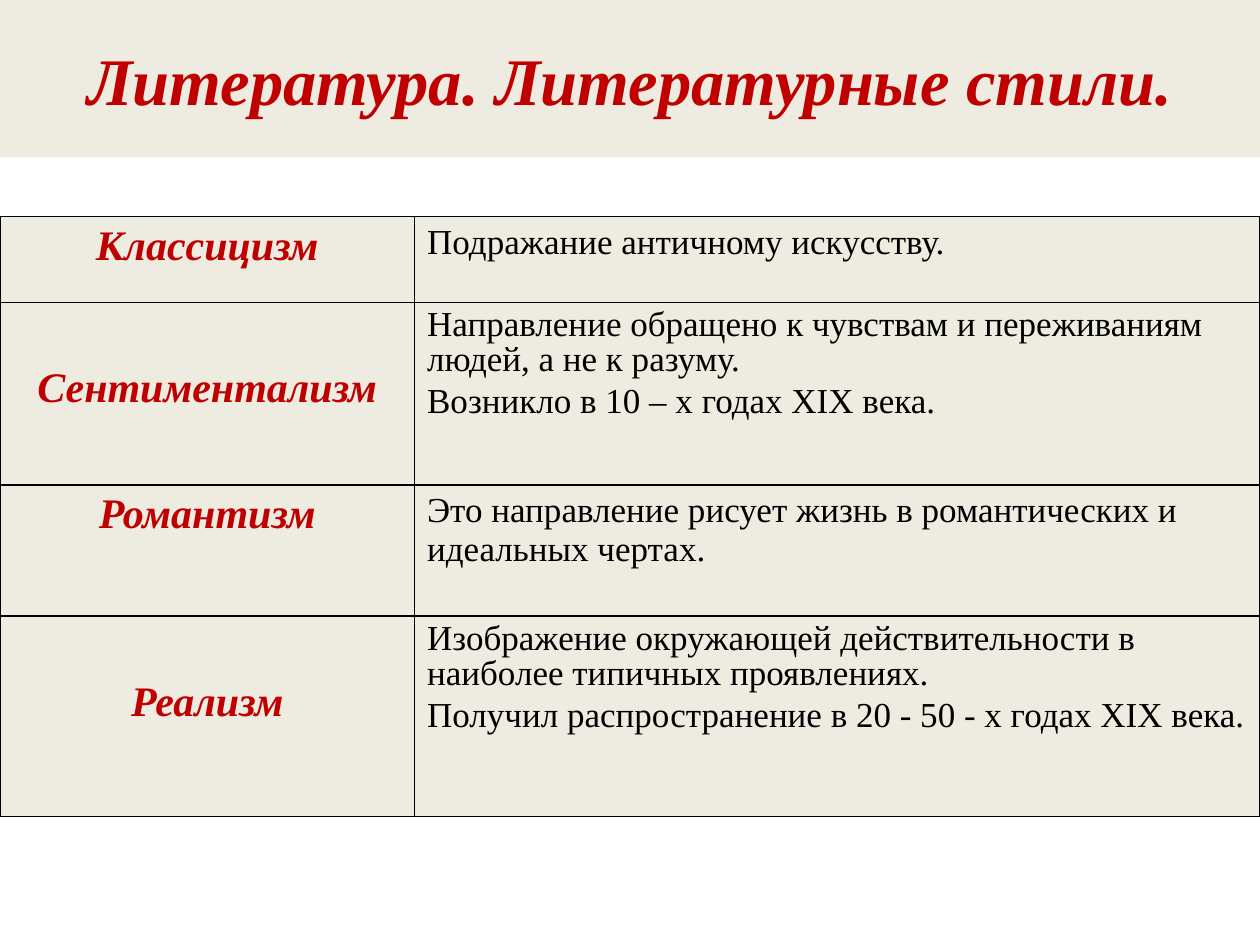
"""Build a slide with a table of literary styles."""
from lxml.etree import SubElement
from pptx import Presentation
from pptx.dml.color import RGBColor
from pptx.enum.text import MSO_ANCHOR as Anchor, PP_ALIGN as Align
from pptx.oxml.ns import qn
from pptx.util import Inches, Pt

RED = RGBColor(0xC0, 0x00, 0x00)
BLACK = RGBColor(0x00, 0x00, 0x00)
BEIGE = RGBColor(0xEE, 0xEC, 0xE1)

HEADING = {"name": "Times New Roman", "bold": True, "italic": True}
TITLE_FONT = {**HEADING, "size": Pt(38)}
STYLE_FONT = {**HEADING, "size": Pt(24)}
TEXT_FONT = {"name": "Times New Roman", "bold": False, "italic": False, "size": Pt(20)}

COLUMN_WIDTHS = [3.29, 6.71]
ROWS = [
    (0.68, 0.05, "Классицизм", ["Подражание античному искусству."]),
    (1.45, 0.5, "Сентиментализм", [
        "Направление обращено к чувствам и переживаниям людей, а не к разуму.",
        "Возникло в 10 – х годах XIX века.",
    ]),
    (1.04, 0.05, "Романтизм", [
        "Это направление рисует жизнь в романтических и идеальных чертах.",
    ]),
    (1.59, 0.5, "Реализм", [
        "Изображение окружающей действительности в наиболее типичных проявлениях.",
        "Получил распространение в 20 - 50 - х годах XIX века.",
    ]),
]


def format_font(paragraph, values, color):
    for name, value in values.items():
        setattr(paragraph.font, name, value)
    paragraph.font.color.rgb = color


def fill_cell(cell, lines, values, color, alignment):
    for index, line in enumerate(lines):
        frame = cell.text_frame
        paragraph = frame.add_paragraph() if index else frame.paragraphs[0]
        paragraph.text = line
        paragraph.alignment = alignment
        if len(lines) > 1:
            paragraph.line_spacing = 0.9
        if index:
            paragraph.space_before = Pt(4)
        format_font(paragraph, values, color)
    properties = cell._tc.get_or_add_tcPr()
    for side in ("lnL", "lnR", "lnT", "lnB"):
        border = SubElement(properties, qn(f"a:{side}"), w=str(Pt(1)))
        border_fill = SubElement(border, qn("a:solidFill"))
        SubElement(border_fill, qn("a:srgbClr"), val=str(BLACK))
    cell.fill.solid()
    cell.fill.fore_color.rgb = BEIGE


presentation = Presentation()
presentation.slide_width = Inches(10)
presentation.slide_height = Inches(7.5)
slide = presentation.slides.add_slide(presentation.slide_layouts[5])

title = slide.shapes.title
title.left, title.top, title.width, title.height = (
    Inches(0), Inches(0), Inches(10), Inches(1.25))
title.fill.solid()
title.fill.fore_color.rgb = BEIGE
title.text_frame.text = "Литература. Литературные стили."
title.text_frame.vertical_anchor = Anchor.MIDDLE
title_paragraph = title.text_frame.paragraphs[0]
title_paragraph.alignment = Align.CENTER
format_font(title_paragraph, TITLE_FONT, RED)

table_height = sum(row[0] for row in ROWS)
table = slide.shapes.add_table(
    len(ROWS), len(COLUMN_WIDTHS),
    Inches(0), Inches(1.72), Inches(10), Inches(table_height)).table
table.first_row = False
table.horz_banding = False
for column, width in zip(table.columns, COLUMN_WIDTHS):
    column.width = Inches(width)

for row, (height, top_margin, style, description) in zip(table.rows, ROWS):
    row.height = Inches(height)
    style_cell, description_cell = row.cells
    style_cell.margin_top = Inches(top_margin)
    fill_cell(style_cell, [style], STYLE_FONT, RED, Align.CENTER)
    fill_cell(description_cell, description, TEXT_FONT, BLACK, Align.LEFT)

presentation.save("out.pptx")
